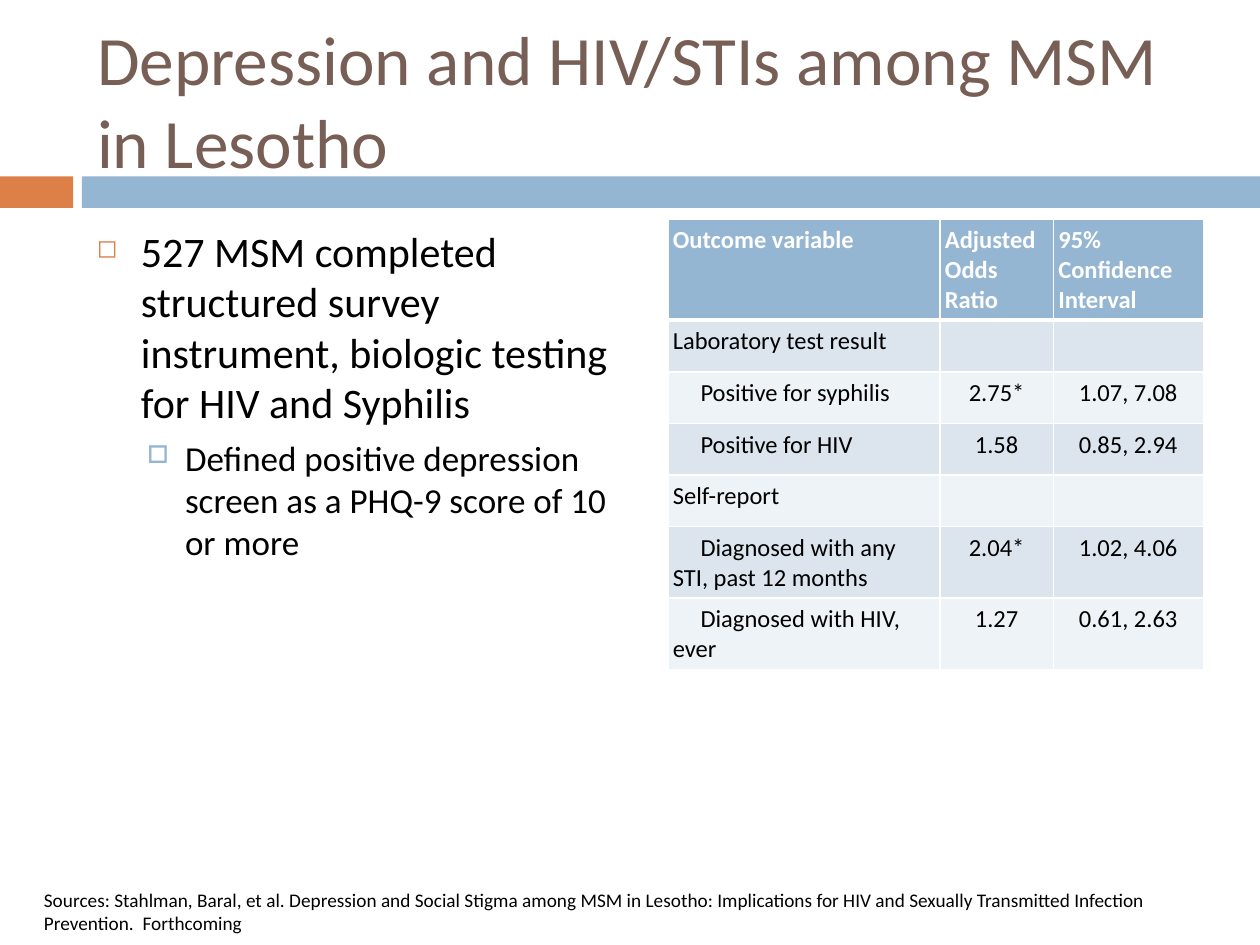
from lxml import etree
from pptx import Presentation
from pptx import util as u
from pptx.dml.color import RGBColor
from pptx.enum import shapes, text
from pptx.oxml import ns

COLORS = {
    "orange": "DD8047", "blue": "94B6D2", "title": "775F55", "text": "000000",
    "white": "FFFFFF", "band_dark": "DCE5EE", "band_light": "EEF3F7",
}
FONT = "Calibri"
INDENT = u.Inches(0.22)

OUTCOMES = [
    ("Outcome variable", "Adjusted Odds Ratio", "95% Confidence Interval"),
    ("Laboratory test result", "", ""),
    ("Positive for syphilis", "2.75*", "1.07, 7.08"),
    ("Positive for HIV", "1.58", "0.85, 2.94"),
    ("Self-report", "", ""),
    ("Diagnosed with any STI, past 12 months", "2.04*", "1.02, 4.06"),
    ("Diagnosed with HIV, ever", "1.27", "0.61, 2.63"),
]
# text, size, space before, left margin, hanging indent, bullet, colour, bullet %
FINDINGS = [
    ("527 MSM completed structured survey instrument, biologic testing for HIV and Syphilis",
     24, 7, 0.35, 0.35, "◻", "orange", 60),
    ("Defined positive depression screen as a PHQ-9 score of 10 or more",
     20, 5.5, 0.7, 0.3, "□", "blue", 70),
]
SOURCES = ("Sources: Stahlman, Baral, et al. Depression and Social Stigma among MSM in Lesotho: "
           "Implications for HIV and Sexually Transmitted Infection Prevention.  Forthcoming")


def rgb(name):
    return RGBColor.from_string(COLORS[name])


def inches(box):
    return [u.Inches(length) for length in box]


def add_xml(parent, tag, **attributes):
    return etree.SubElement(parent, ns.qn(tag), attributes)


def format_runs(paragraph, size, color="text", bold=False):
    for run in paragraph.runs:
        run.font.name = FONT
        run.font.size = u.Pt(size)
        run.font.bold = bold
        run.font.color.rgb = rgb(color)


def add_band(slide, box, color):
    band = slide.shapes.add_shape(shapes.MSO_SHAPE.RECTANGLE, *inches(box))
    band.shadow.inherit = False
    band.fill.solid()
    band.fill.fore_color.rgb = rgb(color)
    band.line.fill.background()


def place_title(slide, box):
    title = slide.shapes.title
    title.left, title.top, title.width, title.height = inches(box)
    frame = title.text_frame
    frame.text = "Depression and HIV/STIs among MSM in Lesotho"
    frame.word_wrap = True
    frame.auto_size = text.MSO_AUTO_SIZE.NONE
    frame.vertical_anchor = text.MSO_ANCHOR.MIDDLE
    frame.paragraphs[0].alignment = text.PP_ALIGN.LEFT
    format_runs(frame.paragraphs[0], 39.6, "title")


def add_findings(slide, box):
    frame = slide.shapes.add_textbox(*inches(box)).text_frame
    frame.word_wrap = True
    for i, (wording, size, before, margin, hang, bullet, color, percent) in enumerate(FINDINGS):
        finding = frame.add_paragraph() if i else frame.paragraphs[0]
        finding.text = wording
        finding.level = i
        finding.space_before = u.Pt(before)
        format_runs(finding, size)
        # Bullet
        properties = finding._p.get_or_add_pPr()
        properties.set("marL", str(u.Inches(margin)))
        properties.set("indent", str(-u.Inches(hang)))
        add_xml(add_xml(properties, "a:buClr"), "a:srgbClr", val=COLORS[color])
        add_xml(properties, "a:buSzPct", val=str(percent * 1000))
        add_xml(properties, "a:buChar", char=bullet)


def add_borders(cell, bottom):
    properties = cell._tc.get_or_add_tcPr()
    widths = {"a:lnL": 1, "a:lnR": 1, "a:lnT": 1, "a:lnB": bottom}
    for position, (tag, width) in enumerate(widths.items()):
        line = add_xml(properties, tag, w=str(u.Pt(width)))
        add_xml(add_xml(line, "a:solidFill"), "a:srgbClr", val=COLORS["white"])
        properties.insert(position, line)


def format_cell(cell, row, column, wording):
    header = row == 0
    cell.margin_left = cell.margin_right = u.Inches(0.04)
    cell.margin_top = cell.margin_bottom = u.Inches(0.05)
    cell.fill.solid()
    band = "band_dark" if row % 2 else "band_light"
    cell.fill.fore_color.rgb = rgb("blue" if header else band)
    add_borders(cell, 3 if header else 1)
    if not wording:
        return
    cell.text_frame.text = wording
    paragraph = cell.text_frame.paragraphs[0]
    format_runs(paragraph, 14, "white" if header else "text", header)
    if column and not header:
        paragraph.alignment = text.PP_ALIGN.CENTER
    elif not header and OUTCOMES[row][1]:
        # Outcomes inside a group have an indented first line
        paragraph._p.get_or_add_pPr().set("indent", str(INDENT))


def add_outcomes(slide, box):
    widths = [2.16, 0.9, 1.19]
    row_height = 0.41
    table = slide.shapes.add_table(len(OUTCOMES), len(widths), *inches(box)).table
    for column, width in zip(table.columns, widths):
        column.width = u.Inches(width)
    for r, outcome in enumerate(OUTCOMES):
        table.rows[r].height = u.Inches(row_height)
        for c, wording in enumerate(outcome):
            format_cell(table.cell(r, c), r, c, wording)


def add_sources(slide, box):
    frame = slide.shapes.add_textbox(*inches(box)).text_frame
    frame.word_wrap = True
    frame.auto_size = text.MSO_AUTO_SIZE.SHAPE_TO_FIT_TEXT
    frame.text = SOURCES
    format_runs(frame.paragraphs[0], 11)


def main():
    deck = Presentation()
    deck.slide_width, deck.slide_height = u.Inches(10), u.Inches(7.5)
    slide = deck.slides.add_slide(deck.slide_layouts[5])
    add_band(slide, (0, 1.4, 0.58, 0.25), "orange")
    add_band(slide, (0.65, 1.4, 9.35, 0.25), "blue")
    place_title(slide, (0.67, 0.25, 8.92, 1.08))
    add_findings(slide, (0.67, 1.74, 4.25, 5))
    add_outcomes(slide, (5.3, 1.74, 4.25, 2.87))
    add_sources(slide, (0.25, 7, 9.58, 0.47))
    deck.save("out.pptx")


if __name__ == "__main__":
    main()
